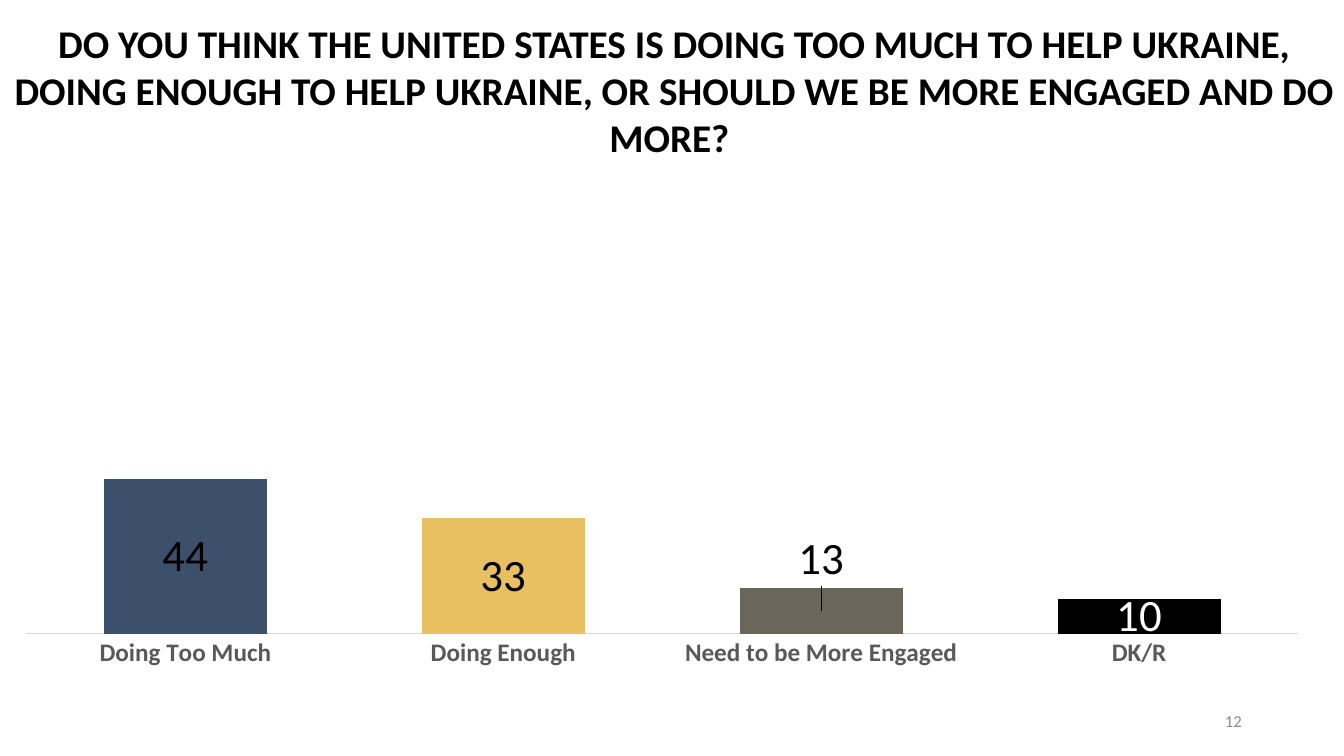
from lxml.etree import SubElement
from pptx import Presentation
from pptx.chart.data import CategoryChartData
from pptx.dml.color import RGBColor
from pptx.enum.chart import XL_CHART_TYPE as ChartType, XL_LABEL_POSITION as LabelPosition
from pptx.enum.chart import XL_TICK_LABEL_POSITION as TickLabels, XL_TICK_MARK as TickMark
from pptx.enum.text import MSO_ANCHOR as Anchor, MSO_AUTO_SIZE as AutoSize, PP_ALIGN as Align
from pptx.oxml.ns import qn
from pptx.util import Cm, Pt

BLACK = RGBColor(0x00, 0x00, 0x00)
WHITE = RGBColor(0xFF, 0xFF, 0xFF)
NAVY = RGBColor(0x3C, 0x4F, 0x6B)
GOLD = RGBColor(0xE8, 0xC0, 0x62)
TAUPE = RGBColor(0x6B, 0x66, 0x5B)
DARK_GRAY = RGBColor(0x59, 0x59, 0x59)
MID_GRAY = RGBColor(0x8C, 0x8C, 0x8C)
LIGHT_GRAY = RGBColor(0xD9, 0xD9, 0xD9)

QUESTION = (
    "DO YOU THINK THE UNITED STATES IS DOING TOO MUCH TO HELP UKRAINE, "
    "DOING ENOUGH TO HELP UKRAINE, OR SHOULD WE BE MORE ENGAGED AND DO MORE? "
)
ANSWERS = [
    ("Doing Too Much", 44, NAVY),
    ("Doing Enough", 33, GOLD),
    ("Need to be More Engaged", 13, TAUPE),
    ("DK/R", 10, BLACK),
]


class PollSlide:
    font_name = "Calibri"

    def __init__(self, deck):
        self.page = deck.slides.add_slide(deck.slide_layouts[5])

    def style(self, font, size, color, bold=False):
        font.name = self.font_name
        font.size = Pt(size)
        font.bold = bold
        font.color.rgb = color

    def fill_text(self, box, text, size, color, align, anchor, bold=False):
        frame = box.text_frame
        frame.text = text
        frame.word_wrap = True
        frame.auto_size = AutoSize.NONE
        frame.vertical_anchor = anchor
        paragraph = frame.paragraphs[0]
        paragraph.alignment = align
        self.style(paragraph.runs[0].font, size, color, bold)

    def title(self, text, left, top, width, height):
        box = self.page.shapes.title
        box.left, box.top, box.width, box.height = left, top, width, height
        self.fill_text(box, text, 28, BLACK, Align.CENTER, Anchor.TOP, True)

    def page_number(self, text, left, top, width, height):
        box = self.page.shapes.add_textbox(left, top, width, height)
        self.fill_text(box, text, 12, MID_GRAY, Align.RIGHT, Anchor.MIDDLE)

    def columns(self, answers, left, top, width, height):
        labels, values, colors = zip(*answers)
        data = CategoryChartData()
        data.categories = labels
        data.add_series("Series 1", values)
        chart = self.page.shapes.add_chart(
            ChartType.COLUMN_STACKED, left, top, width, height, data
        ).chart
        chart.has_title = False
        chart.has_legend = False
        self.style(chart.font, 10, BLACK)

        category_axis = chart.category_axis
        category_axis.major_tick_mark = TickMark.NONE
        category_axis.format.line.color.rgb = LIGHT_GRAY
        category_axis.format.line.width = Pt(0.75)
        self.style(category_axis.tick_labels.font, 18, DARK_GRAY, True)

        value_axis = chart.value_axis
        value_axis.minimum_scale = 0
        value_axis.maximum_scale = 100
        value_axis.has_major_gridlines = False
        value_axis.tick_label_position = TickLabels.NONE
        value_axis.visible = False

        plot = chart.plots[0]
        plot.vary_by_categories = False
        plot.gap_width = 95
        plot.overlap = 100
        series = plot.series[0]
        series.format.fill.solid()
        series.format.fill.fore_color.rgb = colors[0]
        series.data_labels.show_value = True
        series.data_labels.position = LabelPosition.CENTER
        self.style(series.data_labels.font, 32, BLACK)
        for index, color in enumerate(colors[1:], 1):
            fill = series.points[index].format.fill
            fill.solid()
            fill.fore_color.rgb = color
        return series

    def label(self, series, index, color, shift=0):
        label = series.points[index].data_label
        self.style(label.font, 32, color)
        label.position = LabelPosition.CENTER
        if shift:
            entry = series.data_labels._element.findall(qn("c:dLbl"))[-1]
            layout = SubElement(entry, qn("c:layout"))
            manual = SubElement(layout, qn("c:manualLayout"))
            SubElement(manual, qn("c:x")).set("val", "0")
            SubElement(manual, qn("c:y")).set("val", str(shift))
            entry.insert(1, layout)


def main():
    deck = Presentation()
    deck.slide_width, deck.slide_height = Cm(33.87), Cm(19.05)
    slide = PollSlide(deck)
    series = slide.columns(ANSWERS, Cm(0), Cm(6.93), Cm(33.38), Cm(10.11))
    slide.label(series, 2, BLACK, shift=-0.13)
    slide.label(series, 3, WHITE)
    slide.title(QUESTION, Cm(0.1), Cm(0.36), Cm(33.76), Cm(5.21))
    slide.page_number("12", Cm(23.93), Cm(17.65), Cm(7.62), Cm(1.02))
    deck.save("out.pptx")


if __name__ == "__main__":
    main()
